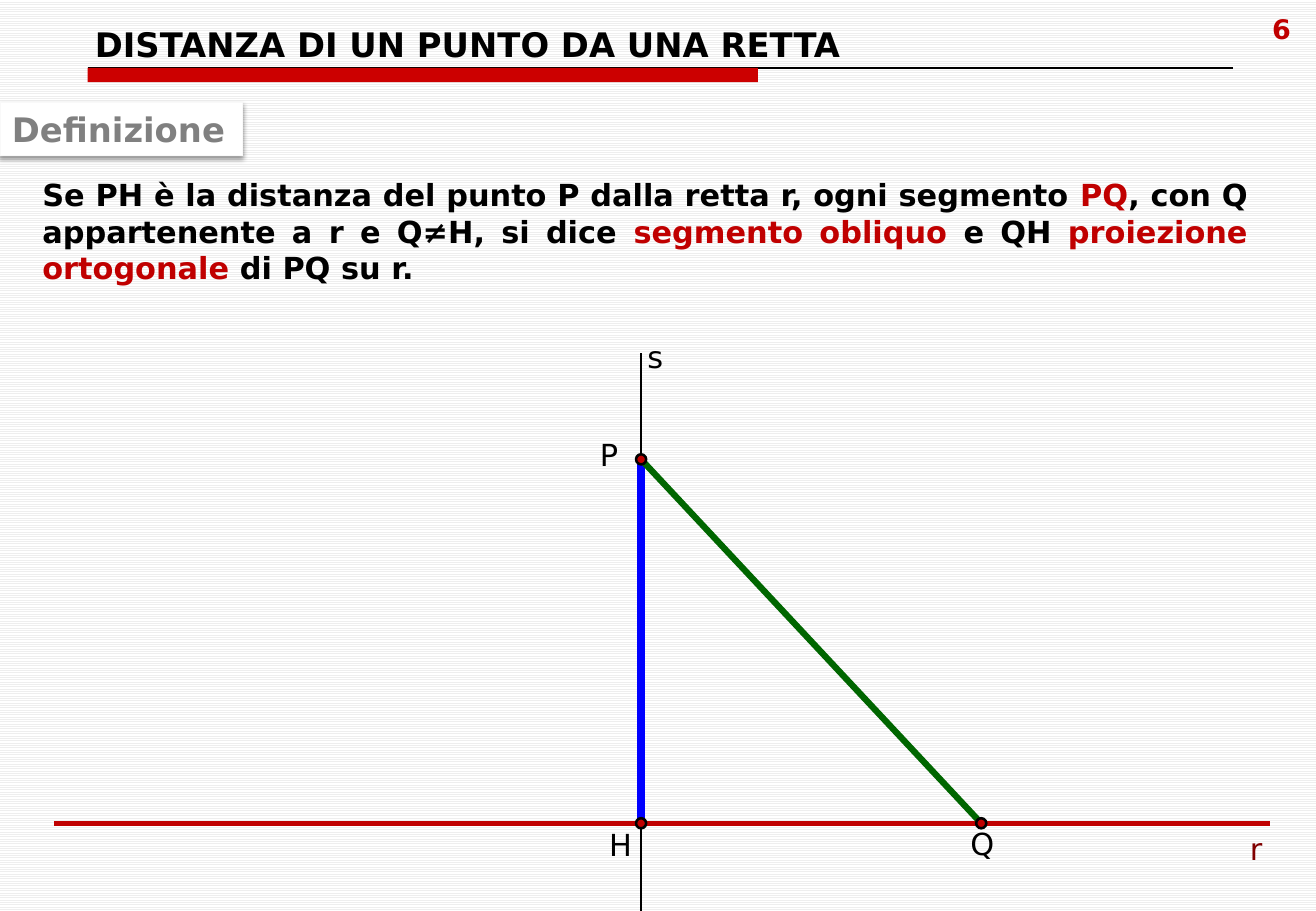
from dataclasses import dataclass

from lxml import etree
from pptx import Presentation
from pptx import util as u
from pptx.dml.color import RGBColor
from pptx.enum import dml, shapes, text
from pptx.oxml import ns

Pt = u.Pt


@dataclass(frozen=True)
class Theme:
    font: str = "DejaVu Sans"
    black: str = "000000"
    white: str = "FFFFFF"
    stripe: str = "EEEEEE"
    edge: str = "F9F9F9"
    grey: str = "808080"
    red: str = "C00000"
    bar: str = "CC0000"
    maroon: str = "800000"
    blue: str = "0000FF"
    green: str = "006600"
    head: int = 20
    body: int = 18
    page: int = 16


T = Theme()
rgb = RGBColor.from_string


def write(shape, runs, size, bold=True, align=text.PP_ALIGN.LEFT, wrap=True,
          anchor=text.MSO_ANCHOR.TOP):
    frame = shape.text_frame
    frame.word_wrap = wrap
    frame.auto_size = text.MSO_AUTO_SIZE.NONE
    frame.vertical_anchor = anchor
    para = frame.paragraphs[0]
    para.alignment = align
    for words, color in runs:
        run = para.add_run()
        run.text = words
        run.font.name = T.font
        run.font.size = Pt(size)
        run.font.bold = bold
        run.font.color.rgb = rgb(color)


def add_text(slide, box, runs, size, **style):
    shape = slide.shapes.add_textbox(*map(Pt, box))
    write(shape, runs, size, **style)


def add_line(slide, start, end, color, width):
    line = slide.shapes.add_connector(
        shapes.MSO_CONNECTOR.STRAIGHT, *map(Pt, (*start, *end)))
    line.line.color.rgb = rgb(color)
    line.line.width = Pt(width)
    etree.SubElement(line._element.spPr, ns.qn("a:effectLst"))


def add_shape(slide, kind, box, fill, edge, width):
    shape = slide.shapes.add_shape(kind, *map(Pt, box))
    shape.shadow.inherit = False
    shape.fill.solid()
    shape.fill.fore_color.rgb = rgb(fill)
    shape.line.color.rgb = rgb(edge)
    shape.line.width = Pt(width)
    return shape


def add_dot(slide, point, size=6):
    x, y = point
    box = (x - size / 2, y - size / 2, size, size)
    add_shape(slide, shapes.MSO_SHAPE.OVAL, box, T.red, T.black, 1.5)


def add_shade(shape):
    effects = shape._element.spPr.find(ns.qn("a:effectLst"))
    shade = etree.SubElement(
        effects, ns.qn("a:outerShdw"), blurRad=str(Pt(3.1)),
        dist=str(Pt(1.6)), dir="5400000", rotWithShape="0")
    color = etree.SubElement(shade, ns.qn("a:srgbClr"), val=T.black)
    etree.SubElement(color, ns.qn("a:alpha"), val="38000")


def set_back(slide):
    fill = slide.background.fill
    fill.patterned()
    fill.pattern = dml.MSO_PATTERN.LIGHT_HORIZONTAL
    fill.fore_color.rgb = rgb(T.stripe)
    fill.back_color.rgb = rgb(T.white)


def set_title(slide, words):
    title = slide.shapes.title
    title.left, title.top, title.width, title.height = map(
        Pt, (49, 10.8, 682.5, 27.4))
    title.text_frame.margin_bottom = 0
    write(title, [(words, T.black)], T.head, anchor=text.MSO_ANCHOR.BOTTOM)


def add_head(slide):
    add_line(slide, (52, 40.3), (731, 40.3), T.black, 0.75)
    add_shape(slide, shapes.MSO_SHAPE.RECTANGLE, (52, 40.3, 397.3, 8.4),
              T.bar, T.bar, 0.75).line.fill.background()
    add_text(slide, (733, 3.6, 53, 37.4), [("6", T.red)], T.page,
             align=text.PP_ALIGN.CENTER)
    tag = add_shape(slide, shapes.MSO_SHAPE.RECTANGLE, (0, 60.8, 144, 31.6),
                    T.white, T.edge, 0.75)
    add_shade(tag)
    write(tag, [("Definizione", T.grey)], T.head,
          anchor=text.MSO_ANCHOR.MIDDLE)


def add_rule(slide):
    runs = [
        ("Se PH è la distanza del punto P dalla retta r, ogni segmento ",
         T.black),
        ("PQ", T.red),
        (", con Q appartenente a r e Q≠H, si dice ", T.black),
        ("segmento obliquo ", T.red),
        ("e QH ", T.black),
        ("proiezione ortogonale ", T.red),
        ("di PQ su r.", T.black),
    ]
    add_text(slide, (18, 101, 728.6, 72.7), runs, T.body,
             align=text.PP_ALIGN.JUSTIFY)


def add_figure(slide):
    p, h, q = (380, 272.3), (380, 488), (581.6, 488)
    add_line(slide, (32, h[1]), (753, h[1]), T.red, 3)
    add_line(slide, (p[0], 209.4), (p[0], 540), T.black, 1.5)
    add_line(slide, p, h, T.blue, 4.5)
    add_line(slide, p, q, T.green, 3.75)
    for point in (p, h, q):
        add_dot(slide, point)
    labels = [
        ("P", 348.5, 255, 25, T.black),
        ("s", 376.6, 196.8, 24, T.black),
        ("H", 354, 486, 28, T.black),
        ("Q", 568, 485.5, 29, T.black),
        ("r", 733.7, 488.3, 22, T.maroon),
    ]
    for name, x, y, width, color in labels:
        add_text(slide, (x, y, width, 29), [(name, color)], T.body,
                 bold=False, wrap=False)


def main():
    deck = Presentation()
    deck.slide_width, deck.slide_height = Pt(780), Pt(540)
    slide = deck.slides.add_slide(deck.slide_layouts[5])
    set_back(slide)
    set_title(slide, "DISTANZA DI UN PUNTO DA UNA RETTA")
    add_head(slide)
    add_rule(slide)
    add_figure(slide)
    deck.save("out.pptx")


if __name__ == "__main__":
    main()
